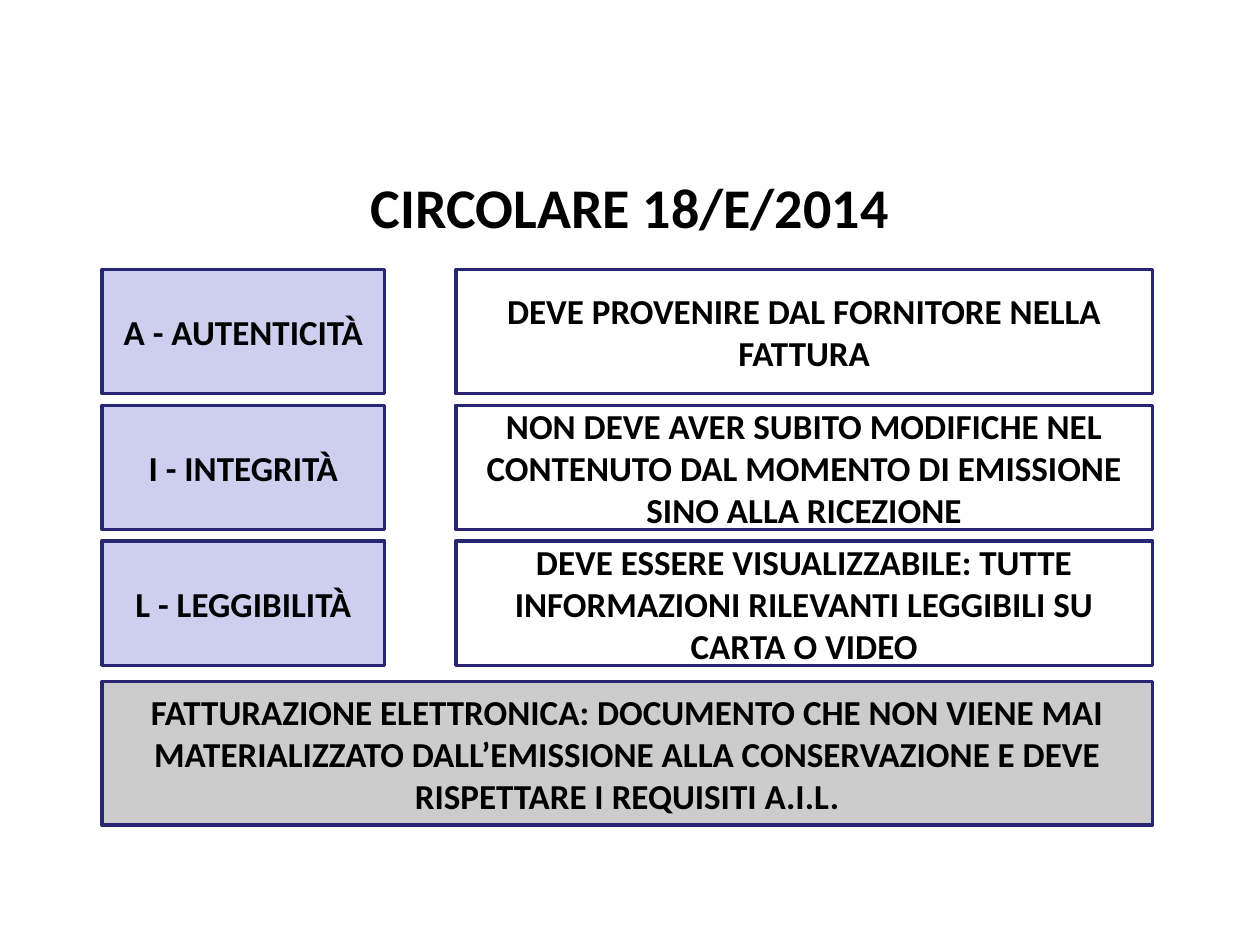
from pptx import Presentation
from pptx.dml.color import RGBColor
from pptx.enum import shapes, text
from pptx.util import Pt

COLORS = {
    "ink": "000000",
    "border": "262673",
    "label": "CECEEF",
    "meaning": "FFFFFF",
    "summary": "CCCCCC",
}


def write(shape, wording, size=20):
    """Put centred bold text in a shape."""
    frame = shape.text_frame
    frame.word_wrap = True
    frame.vertical_anchor = text.MSO_ANCHOR.MIDDLE
    para = frame.paragraphs[0]
    para.alignment = text.PP_ALIGN.CENTER
    span = para.add_run()
    span.text = wording
    span.font.name = "Calibri"
    span.font.size = Pt(size)
    span.font.bold = True
    span.font.color.rgb = RGBColor.from_string(COLORS["ink"])


def add_box(page, wording, left, top, width, height, fill):
    """Add a bordered rectangle with text."""
    box = page.shapes.add_shape(
        shapes.MSO_SHAPE.RECTANGLE, Pt(left), Pt(top), Pt(width), Pt(height))
    box.shadow.inherit = False
    box.fill.solid()
    box.fill.fore_color.rgb = RGBColor.from_string(COLORS[fill])
    box.line.color.rgb = RGBColor.from_string(COLORS["border"])
    box.line.width = Pt(2)
    write(box, wording)


deck = Presentation()
deck.slide_width, deck.slide_height = Pt(720), Pt(540)
page = deck.slides.add_slide(deck.slide_layouts[5])

# Title
title = page.shapes.title
title.left, title.top, title.width, title.height = Pt(0), Pt(96.5), Pt(720), Pt(43)
write(title, "CIRCOLARE 18/E/2014", size=32)

# Requirements: label on the left, meaning on the right
requirements = [
    ("A - AUTENTICITÀ", "DEVE PROVENIRE DAL FORNITORE NELLA FATTURA"),
    ("I - INTEGRITÀ", "NON DEVE AVER SUBITO MODIFICHE NEL CONTENUTO "
                      "DAL MOMENTO DI EMISSIONE SINO ALLA RICEZIONE"),
    ("L - LEGGIBILITÀ", "DEVE ESSERE VISUALIZZABILE: TUTTE INFORMAZIONI "
                        "RILEVANTI LEGGIBILI SU CARTA O VIDEO"),
]
left, right = 58.3, 658.6
meaning_left = 260.5
for row, (label, meaning) in enumerate(requirements):
    top = 154 + row * 77.6
    add_box(page, label, left, top, 161.5, 71, "label")
    add_box(page, meaning, meaning_left, top, right - meaning_left, 71, "meaning")

# Summary across both columns
add_box(page, "FATTURAZIONE ELETTRONICA: DOCUMENTO CHE NON VIENE MAI "
              "MATERIALIZZATO DALL’EMISSIONE ALLA CONSERVAZIONE E DEVE "
              "RISPETTARE I REQUISITI A.I.L.",
        left, 389.5, right - left, 82, "summary")

deck.save("out.pptx")
